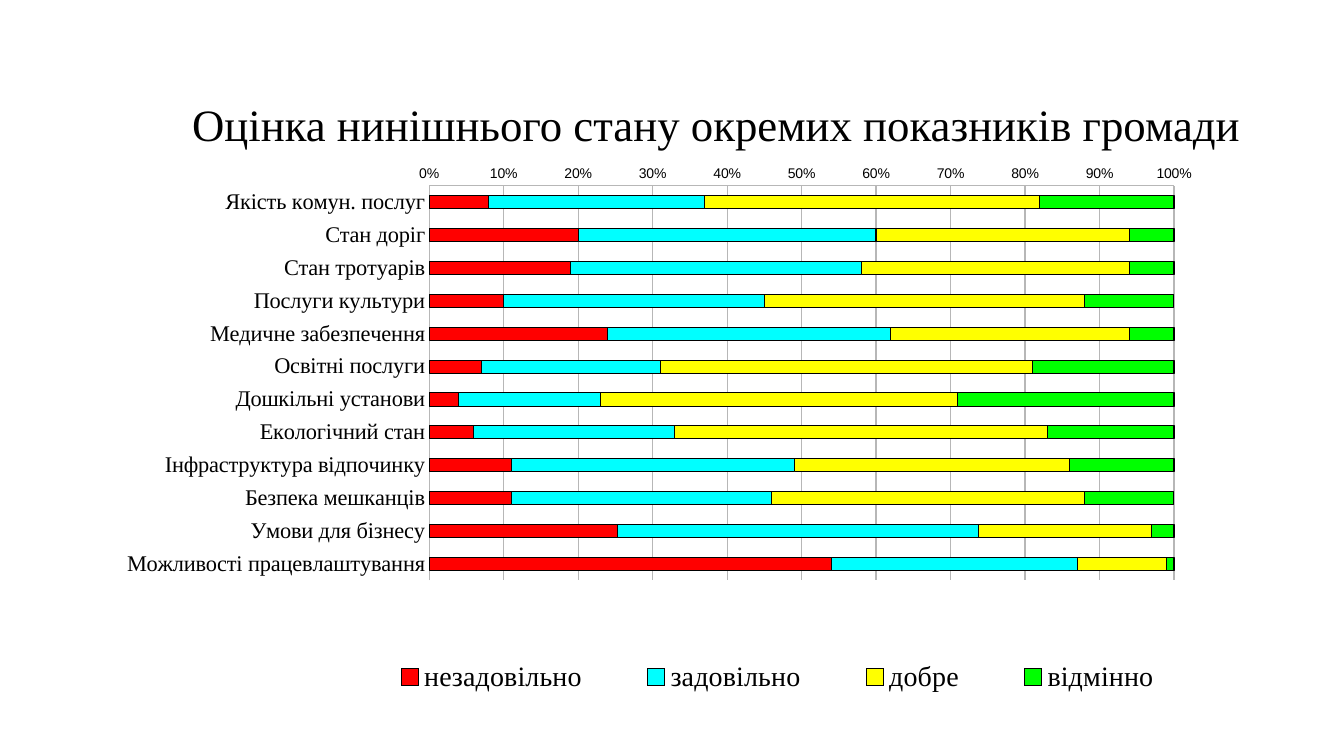
from lxml import etree
from pptx import Presentation
from pptx.chart.data import CategoryChartData
from pptx.dml.color import RGBColor
from pptx.enum.chart import (XL_AXIS_CROSSES, XL_CHART_TYPE, XL_LEGEND_POSITION,
                             XL_TICK_MARK)
from pptx.enum.text import MSO_ANCHOR, PP_ALIGN
from pptx.oxml.ns import qn
from pptx.util import Cm, Pt

BAR_STACKED_100 = XL_CHART_TYPE.BAR_STACKED_100
CROSS_AT_MAXIMUM = XL_AXIS_CROSSES.MAXIMUM
LEGEND_RIGHT = XL_LEGEND_POSITION.RIGHT
NO_TICKS = XL_TICK_MARK.NONE
MIDDLE = MSO_ANCHOR.MIDDLE
CENTER = PP_ALIGN.CENTER

TITLE_ONLY_LAYOUT = 5
SERIF = "Times New Roman"
BLACK = "000000"
GRID_GRAY = "B7B7B7"

TITLE = "Оцінка нинішнього стану окремих показників громади"
RATINGS = [("незадовільно", "FF0000"), ("задовільно", "00FFFF"),
           ("добре", "FFFF00"), ("відмінно", "00FF00")]
# Share of each rating, in the order of RATINGS
INDICATORS = {
    "Якість комун. послуг": (8, 29, 45, 18),
    "Стан доріг": (20, 40, 34, 6),
    "Стан тротуарів": (19, 39, 36, 6),
    "Послуги культури": (10, 35, 43, 12),
    "Медичне забезпечення": (24, 38, 32, 6),
    "Освітні послуги": (7, 24, 50, 19),
    "Дошкільні установи": (4, 19, 48, 29),
    "Екологічний стан": (6, 27, 50, 17),
    "Інфраструктура відпочинку": (11, 38, 37, 14),
    "Безпека мешканців": (11, 35, 42, 12),
    "Умови для бізнесу": (25, 48, 23, 3),
    "Можливості працевлаштування": (54, 33, 12, 1),
}


def color(hex_code):
    return RGBColor.from_string(hex_code)


def format_font(font, name, size):
    font.name = name
    font.size = Pt(size)
    font.bold = False
    font.color.rgb = color(BLACK)


def format_line(line, hex_code):
    line.color.rgb = color(hex_code)
    line.width = Pt(0.75)


def add_title(slide):
    title = slide.shapes.title
    title.left, title.top = Cm(2.92), Cm(2.13)
    title.width, title.height = Cm(30.28), Cm(2.13)
    title.text_frame.text = TITLE
    title.text_frame.vertical_anchor = MIDDLE
    paragraph = title.text_frame.paragraphs[0]
    paragraph.alignment = CENTER
    paragraph.line_spacing = 0.9
    format_font(paragraph.font, SERIF, 32)


def set_layout(parent, successor, target, x, y, width, height):
    """Place a chart part by fractions of the chart area."""
    for old_layout in parent.findall(qn("c:layout")):
        parent.remove(old_layout)
    layout = etree.Element(qn("c:layout"))
    manual = etree.SubElement(layout, qn("c:manualLayout"))
    settings = [("layoutTarget", target)] if target else []
    settings += [("xMode", "edge"), ("yMode", "edge"),
                 ("x", x), ("y", y), ("w", width), ("h", height)]
    for tag, value in settings:
        etree.SubElement(manual, qn(f"c:{tag}")).set("val", str(value))
    successor.addprevious(layout)


def format_axis(axis, font_name, size):
    axis.major_tick_mark = NO_TICKS
    axis.minor_tick_mark = NO_TICKS
    format_line(axis.format.line, GRID_GRAY)
    format_font(axis.tick_labels.font, font_name, size)


def format_axes(chart):
    category_axis, value_axis = chart.category_axis, chart.value_axis
    format_axis(category_axis, SERIF, 16)
    category_axis.reverse_order = True
    category_axis.crosses = CROSS_AT_MAXIMUM
    format_axis(value_axis, "Arial", 10)
    value_axis.minimum_scale, value_axis.maximum_scale = 0, 1
    value_axis.major_unit = 0.1
    value_axis.tick_labels.number_format = "0%"
    value_axis.tick_labels.number_format_is_linked = False
    value_axis.has_major_gridlines = True
    format_line(value_axis.major_gridlines.format.line, GRID_GRAY)


def format_bars(plot):
    plot.gap_width = 150
    plot.overlap = 100
    plot.vary_by_categories = False
    for series, (_, fill) in zip(plot.series, RATINGS):
        series.format.fill.solid()
        series.format.fill.fore_color.rgb = color(fill)
        format_line(series.format.line, BLACK)


def add_legend(chart):
    chart.has_legend = True
    legend = chart.legend
    legend.position = LEGEND_RIGHT
    legend.include_in_layout = False
    format_font(legend.font, SERIF, 20)
    element = legend._element
    set_layout(element, element.find(qn("c:overlay")), None,
               0.23, 0.85, 0.72, 0.1)


def add_ratings_chart(slide):
    data = CategoryChartData()
    data.categories = list(INDICATORS)
    for (rating, _), shares in zip(RATINGS, zip(*INDICATORS.values())):
        data.add_series(rating, shares)
    chart = slide.shapes.add_chart(BAR_STACKED_100, Cm(1.73), Cm(4.11),
                                   Cm(30.28), Cm(14.4), data).chart
    chart.has_title = False
    format_font(chart.font, "Calibri", 10)
    format_bars(chart.plots[0])
    format_axes(chart)
    add_legend(chart)
    plot_area = chart._chartSpace.chart.plotArea
    set_layout(plot_area, plot_area.find(qn("c:barChart")), "inner",
               0.3, 0.04, 0.62, 0.69)


def main():
    presentation = Presentation()
    presentation.slide_width, presentation.slide_height = Cm(33.87), Cm(19.05)
    layout = presentation.slide_layouts[TITLE_ONLY_LAYOUT]
    slide = presentation.slides.add_slide(layout)
    add_title(slide)
    add_ratings_chart(slide)
    presentation.save("out.pptx")


if __name__ == "__main__":
    main()
